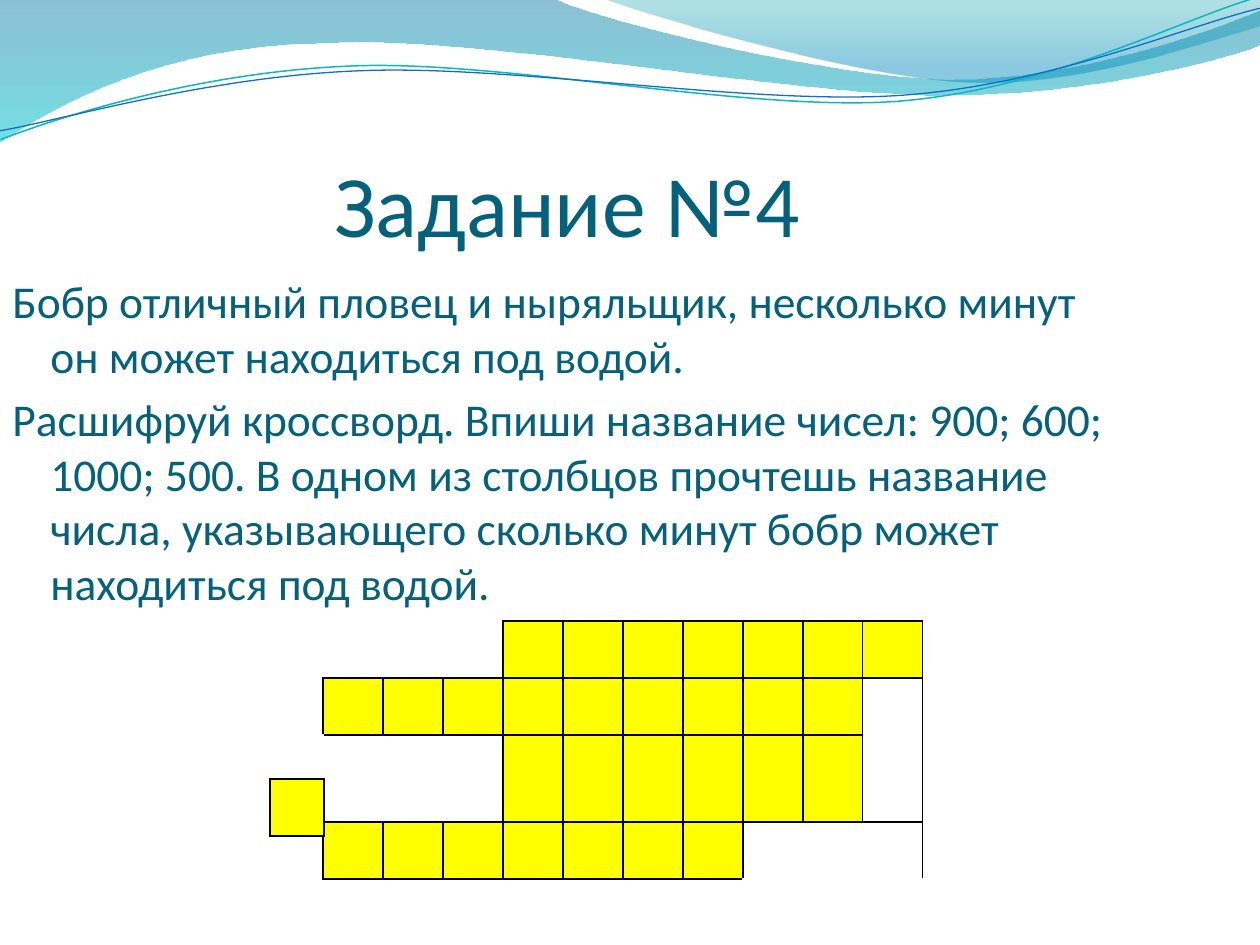
from lxml.etree import SubElement
from pptx import Presentation
from pptx.dml.color import RGBColor as RGB
from pptx.enum.text import MSO_ANCHOR as Anchor, PP_ALIGN as Align
from pptx.oxml.ns import qn
from pptx.util import Pt

# Content
TITLE = "Задание №4"
BODY = [
    "Бобр отличный пловец и ныряльщик, несколько минут он может находиться под водой.",
    "Расшифруй кроссворд. Впиши название чисел: 900; 600; 1000; 500. "
    "В одном из столбцов прочтешь название числа, указывающего сколько минут "
    "бобр может находиться под водой.",
]
FONT = "Calibri"
HEX = {"text": "04617B", "cell": "FFFF00", "blank": "FFFFFF", "edge": "000000"}

# Crossword: Y is a letter cell, equal small letters form one merged blank
WORDS = ["aaaYYYYYYYd",
         "YYYYYYYYYbd",
         "cccYYYYYYbd",
         "YYYYYYYeeed"]
EXTRA = ["Y"]

# Waves: a pair is a straight step, six numbers are a Bezier step
BANDS = [
    ([(0, 0), (554, -1), (600, 21, 837, 79, 955, 79), (1075, 79, 1207, 33, 1260, 11),
      (1261, 45), (1239, 55, 1096, 96, 940, 95), (784, 95, 481, 35, 324, 43),
      (161, 45, 58, 105, -1, 142)],
     [(0, "0074A1", 45), (1, "00C6CF", 55)]),
    ([(604, -1), (641, 14, 859, 78, 969, 82), (1079, 87, 1211, 40, 1260, 26), (1260, 0)],
     [(0, "00A1A9", 30), (0.8, "008BBF", 45)]),
]
TILT = -2.7
LINES = [
    ([(-2, 110), (58, 90, 199, 52, 350, 53), (499, 53, 745, 118, 896, 114),
      (1049, 109, 1184, 45, 1260, 27)], "0AB8BF", 0.85),
    ([(-2, 101), (57, 94, 207, 57, 357, 58), (509, 58, 750, 112, 902, 108),
      (1052, 104, 1188, 52, 1262, 38)], "0F6FC6", 0.75),
]


def px(n):
    return round(n * 914400 / 126)


def color(name):
    return RGB.from_string(HEX[name])


def wave(steps, close):
    """Build the outline from its corners, then bend the Bezier steps."""
    ends = [(px(step[-2]), px(step[-1])) for step in steps]
    pen = slide.shapes.build_freeform(*ends[0])
    pen.add_line_segments(ends[1:], close=close)
    shape = pen.convert_to_shape()
    shape.shadow.inherit = False
    left, top = (min(axis) for axis in zip(*ends))
    sides = list(shape._element.iter(qn("a:lnTo")))
    for side, step in zip(sides, steps[1:]):
        if len(step) == 6:
            side.tag = qn("a:cubicBezTo")
            side.remove(side[0])
            for x, y in zip(step[::2], step[1::2]):
                SubElement(side, qn("a:pt"), x=str(px(x) - left), y=str(px(y) - top))
    return shape


def style(para, size):
    for run in para.runs:
        run.font.name, run.font.size = FONT, Pt(size)
        run.font.color.rgb = color("text")


def border(props, side):
    line = SubElement(props, qn("a:ln" + side), w=str(Pt(1)))
    fill = SubElement(line, qn("a:solidFill"))
    SubElement(fill, qn("a:srgbClr"), val=HEX["edge"])


def grid(rows, left, top, widths, heights):
    """Draw a table whose merges and borders follow from the letter map."""
    frame = slide.shapes.add_table(len(rows), len(widths), px(left), px(top),
                                   px(sum(widths)), px(sum(heights)))
    table = frame.table
    table.first_row = table.horz_banding = False
    for col, wide in zip(table.columns, widths):
        col.width = px(wide)
    for row, high in zip(table.rows, heights):
        row.height = px(high)

    def mark(r, c):
        return rows[r][c] if 0 <= r < len(rows) and 0 <= c < len(widths) else ""

    blanks = {}
    for r in range(len(rows)):
        for c in range(len(widths)):
            cell, own = table.cell(r, c), mark(r, c)
            props = cell._tc.get_or_add_tcPr()
            for side, dr, dc in (("L", 0, -1), ("R", 0, 1), ("T", -1, 0), ("B", 1, 0)):
                near = mark(r + dr, c + dc)
                if "Y" in own + near or (near and near != own):
                    border(props, side)
            cell.fill.solid()
            cell.fill.fore_color.rgb = color("cell" if own == "Y" else "blank")
            if own != "Y":
                blanks.setdefault(own, []).append(cell)
    for cells in blanks.values():
        cells[0].merge(cells[-1])


deck = Presentation()
deck.slide_width, deck.slide_height = px(1260), px(945)
slide = deck.slides.add_slide(deck.slide_layouts[5])

# Waves
for steps, stops in BANDS:
    band = wave(steps, True)
    band.line.fill.background()
    band.fill.gradient()
    band.fill.gradient_angle = 270
    for stop, (place, tone, _) in zip(band.fill.gradient_stops, stops):
        stop.position = place
        stop.color.rgb = RGB.from_string(tone)
    for node, (_, _, alpha) in zip(band._element.iter(qn("a:srgbClr")), stops):
        SubElement(node, qn("a:alpha"), val=str(alpha * 1000))
for steps, tone, width in LINES:
    line = wave(steps, False)
    line.rotation = TILT
    line.fill.background()
    line.line.color.rgb = RGB.from_string(tone)
    line.line.width = Pt(width)

# Title, in front of the waves
title = slide.shapes.title
slide.shapes._spTree.append(title._element)
title.left, title.top, title.width, title.height = map(px, (0, 97, 1134, 158))
frame = title.text_frame
frame.text = TITLE
frame.word_wrap = True
frame.vertical_anchor = Anchor.BOTTOM
frame.margin_left = frame.margin_right = frame.margin_bottom = 0
frame.margin_top = px(6)
frame.paragraphs[0].alignment = Align.CENTER
style(frame.paragraphs[0], 50)

# Task text with hanging indent
frame = slide.shapes.add_textbox(*map(px, (0, 267, 1134, 605))).text_frame
frame.word_wrap = True
frame.text = "\n".join(BODY)
for para in frame.paragraphs:
    props = para._p.get_or_add_pPr()
    props.set("marL", str(px(38)))
    props.set("indent", str(px(-38)))
    para.space_before = Pt(5.2)
    style(para, 26)

# Crossword
grid(WORDS, 323, 621, [60] * 10 + [55], [57, 57, 87, 57])
grid(EXTRA, 270, 779, [54], [57])

deck.save("out.pptx")
